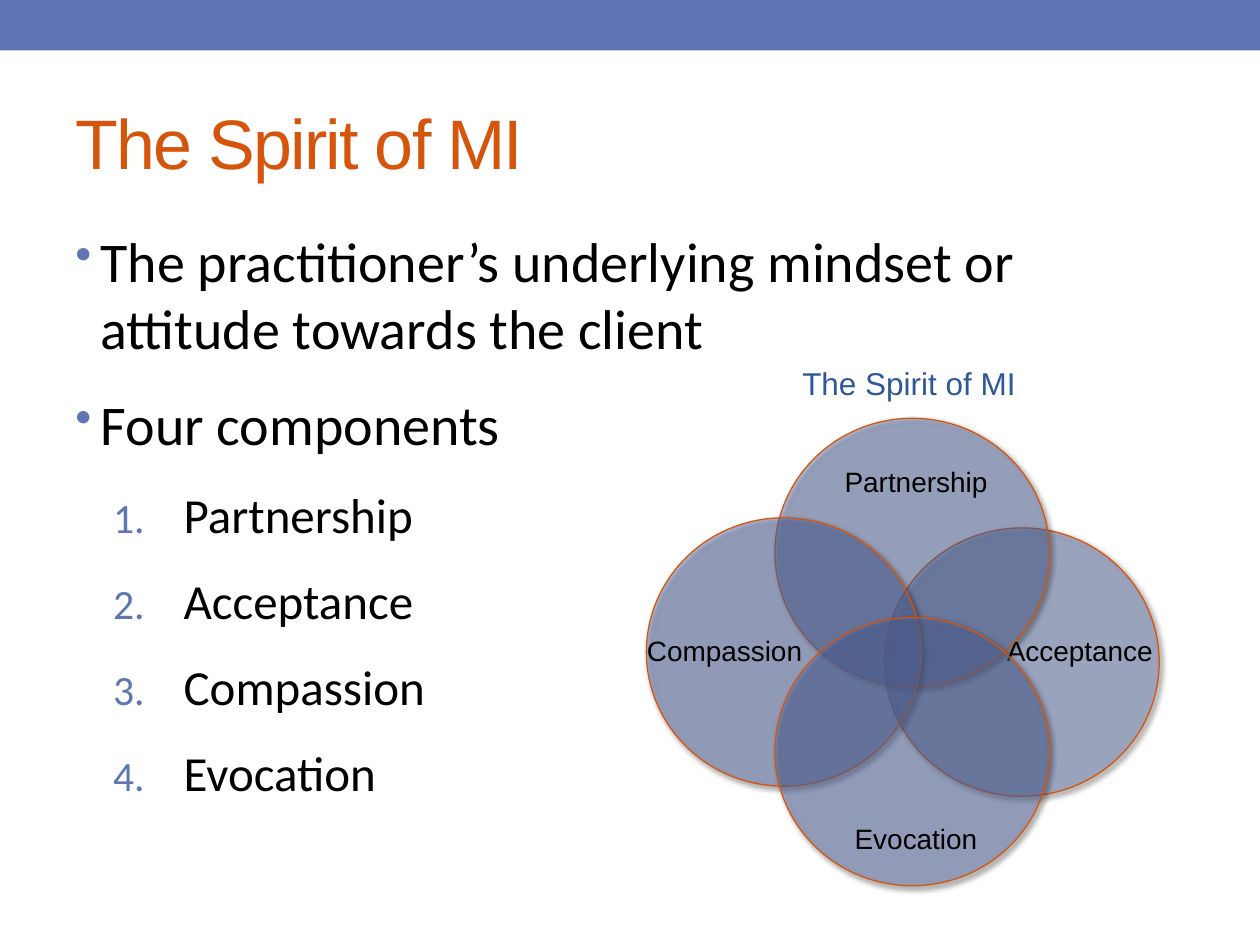
from lxml import etree
from pptx import Presentation
from pptx.dml.color import RGBColor
from pptx.enum import shapes, text
from pptx.oxml import ns
from pptx.util import Inches, Pt

BLUE = RGBColor(0x60, 0x76, 0xB4)
DARK_BLUE = RGBColor(0x2F, 0x58, 0x97)
ORANGE = RGBColor(0xD6, 0x55, 0x0D)
BLACK = RGBColor(0, 0, 0)

TITLE = "The Spirit of MI"
POINTS = [
    "The practitioner’s underlying mindset or attitude towards the client",
    "Four components",
]
COMPONENTS = ["Partnership", "Acceptance", "Compassion", "Evocation"]

CIRCLE_SIZE = (2.18, 2.13)
LABEL_SIZE = (1.52, 0.37)
# name, circle left and top, opacity in percent, label left and top
CIRCLES = [
    ("Acceptance", (7.02, 4.19), 40, (7.81, 4.98)),
    ("Partnership", (6.15, 3.32), 43, (6.51, 3.64)),
    ("Compassion", (5.13, 4.11), 46, (4.99, 4.98)),
    ("Evocation", (6.15, 4.9), 45, (6.51, 6.47)),
]


def add_child(parent, tag, **attributes):
    child = etree.SubElement(parent, ns.qn(tag))
    for name, value in attributes.items():
        child.set(name, str(value))
    return child


def set_font(paragraph, name, size, color):
    paragraph.font.name = name
    paragraph.font.size = Pt(size)
    paragraph.font.color.rgb = color


def add_text_box(slide, left, top, width, height):
    box = slide.shapes.add_textbox(*map(Inches, (left, top, width, height)))
    box.text_frame.word_wrap = True
    return box.text_frame


def add_label(slide, words, position, size, font_size, color):
    paragraph = add_text_box(slide, *position, *size).paragraphs[0]
    paragraph.text = words
    paragraph.alignment = text.PP_ALIGN.CENTER
    set_font(paragraph, "Arial", font_size, color)


def add_list_item(paragraph, words, size, margin, indent, marker, **marker_attributes):
    paragraph.text = words
    paragraph.space_before = Pt(0)
    paragraph.space_after = Pt(10)
    properties = paragraph._p.get_or_add_pPr()
    properties.set("marL", str(Inches(margin)))
    properties.set("indent", str(Inches(indent)))
    space_before = properties.find(ns.qn("a:spcBef"))
    space_before.clear()
    add_child(space_before, "a:spcPct", val=20000)
    add_child(add_child(properties, "a:buClr"), "a:srgbClr", val=BLUE)
    add_child(properties, "a:buSzPct", val=85000)
    add_child(properties, marker, **marker_attributes)
    set_font(paragraph, "Calibri", size, BLACK)


def add_circle(slide, position, opacity):
    circle = slide.shapes.add_shape(
        shapes.MSO_SHAPE.OVAL, *map(Inches, position + CIRCLE_SIZE))
    circle.fill.solid()
    circle.fill.fore_color.rgb = BLUE
    circle.line.color.rgb = ORANGE
    circle.line.width = Pt(0.75)
    circle.shadow.inherit = False
    properties = circle._element.spPr
    fill_color = properties.find(ns.qn("a:solidFill"))[0]
    add_child(fill_color, "a:alpha", val=opacity * 1000)
    shadow = add_child(properties.find(ns.qn("a:effectLst")), "a:outerShdw",
                       blurRad=Pt(3), dist=Pt(2), dir=45 * 60000, rotWithShape=0)
    add_child(add_child(shadow, "a:srgbClr", val=BLACK), "a:alpha", val=60000)


def main():
    presentation = Presentation()
    presentation.slide_width = Inches(10)
    presentation.slide_height = Inches(7.5)
    slide = presentation.slides.add_slide(presentation.slide_layouts[6])

    band = slide.shapes.add_shape(
        shapes.MSO_SHAPE.RECTANGLE, 0, 0, presentation.slide_width, Inches(0.4))
    band.fill.solid()
    band.fill.fore_color.rgb = BLUE
    band.line.fill.background()
    band.shadow.inherit = False

    title_frame = add_text_box(slide, 0.5, 0.58, 9, 1.08)
    title_frame.vertical_anchor = text.MSO_ANCHOR.MIDDLE
    title = title_frame.paragraphs[0]
    title.text = TITLE
    set_font(title, "Arial", 40, ORANGE)
    title.runs[0]._r.get_or_add_rPr().set("spc", "-100")

    items = [(words, 32, 0.2, -0.2, "a:buChar", {"char": "•"}) for words in POINTS]
    items += [(words, 28, 0.86, -0.56, "a:buAutoNum", {"type": "arabicPeriod"})
              for words in COMPONENTS]
    body = add_text_box(slide, 0.5, 1.75, 9, 5.33)
    for index, (*item, attributes) in enumerate(items):
        paragraph = body.add_paragraph() if index else body.paragraphs[0]
        add_list_item(paragraph, *item, **attributes)

    for name, position, opacity, label_position in CIRCLES:
        add_circle(slide, position, opacity)
        add_label(slide, name, label_position, LABEL_SIZE, 16, BLACK)
    add_label(slide, TITLE, (5.96, 2.84), (2.51, 0.4), 18, DARK_BLUE)

    presentation.save("out.pptx")


if __name__ == "__main__":
    main()
